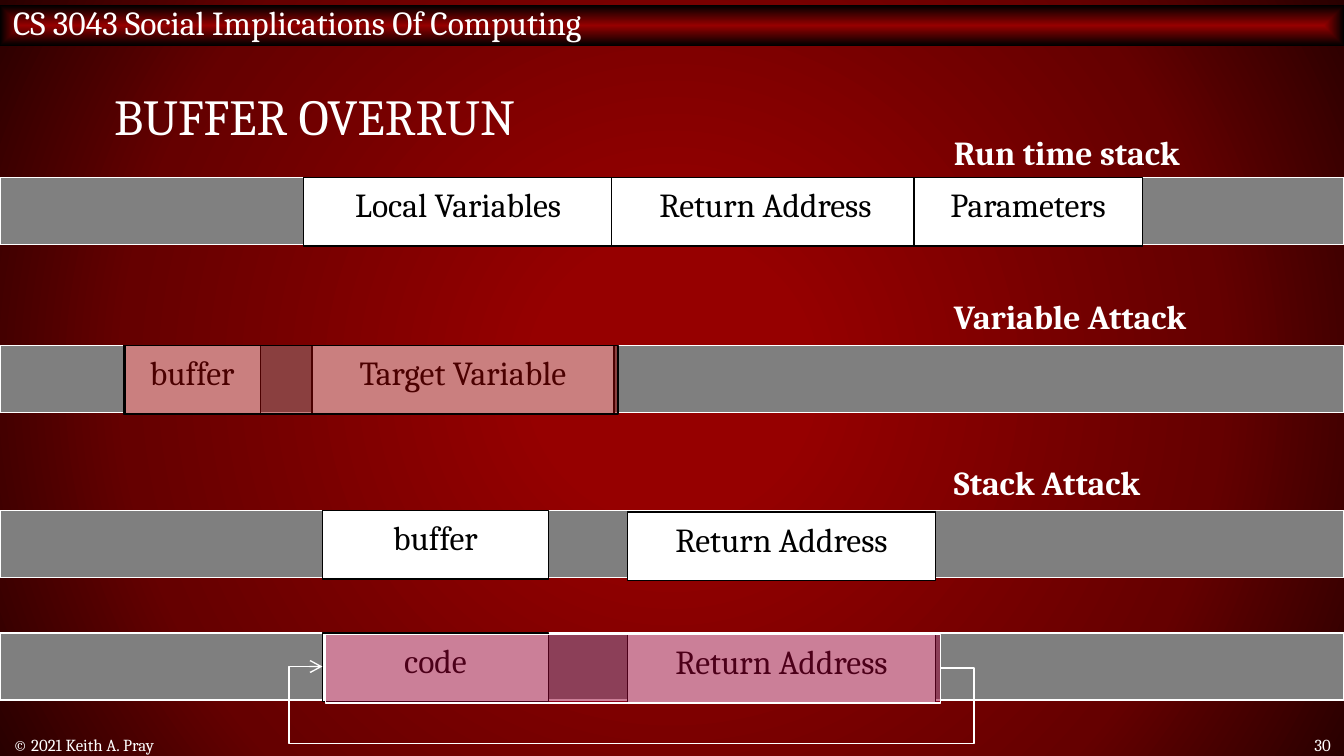
from dataclasses import dataclass

from lxml import etree
from pptx import Presentation
from pptx import util as u
from pptx.dml import color
from pptx.enum import shapes, text
from pptx.oxml import ns, parse_xml


@dataclass(frozen=True)
class Theme:
    font: str = "Cambria"
    title: float = 27
    body: float = 18
    footer: float = 9
    line: float = 0.75
    white: str = "FFFFFF"
    black: str = "000000"
    gray: str = "7F7F7F"
    light_gray: str = "808080"
    red: str = "960000"
    dark_red: str = "650000"
    deep_red: str = "290000"
    crimson: str = "990033"


THEME = Theme()
CELL_HEIGHT = 0.51
LEFT, CENTER, RIGHT = text.PP_ALIGN.LEFT, text.PP_ALIGN.CENTER, text.PP_ALIGN.RIGHT
TOP, MIDDLE = text.MSO_ANCHOR.TOP, text.MSO_ANCHOR.MIDDLE

STACK_ROWS = [
    (1.32, THEME.light_gray, [("Local Variables", 2.26, 1.32, 2.3),
                              ("Return Address", 4.55, 1.32, 2.29),
                              ("Parameters", 6.8, 1.32, 1.7)]),
    (2.57, THEME.gray, [("buffer", 0.92, 2.57, 1.02), ("Target Variable", 2.32, 2.57, 2.25)]),
    (3.8, THEME.gray, [("buffer", 2.4, 3.8, 1.68), ("Return Address", 4.67, 3.81, 2.29)]),
    (4.71, THEME.gray, [("code", 2.4, 4.71, 1.68), ("Return Address", 4.67, 4.72, 2.29)]),
]
OVERRUNS = {
    2.57: (0.93, 2.57, 3.67, THEME.red, THEME.black),
    4.71: (2.42, 4.72, 4.58, THEME.crimson, THEME.white),
}
HEADINGS = [("Run time stack", 0.93), ("Variable Attack", 2.15), ("Stack Attack", 3.39)]


def rgb(value):
    return color.RGBColor.from_string(value)


def write(shape, words, size=THEME.body, ink=THEME.white, bold=False, align=LEFT,
          anchor=TOP, wrap=True, spacing=None):
    frame = shape.text_frame
    frame.auto_size = text.MSO_AUTO_SIZE.NONE
    frame.word_wrap = wrap
    frame.vertical_anchor = anchor
    para = frame.paragraphs[0]
    para.alignment = align
    if spacing:
        para.line_spacing = spacing
    span = para.add_run()
    span.text = words
    span.font.name = THEME.font
    span.font.size = u.Pt(size)
    span.font.bold = bold
    span.font.color.rgb = rgb(ink)


def add_text(page, words, left, top, width, height, **style):
    box = page.shapes.add_textbox(*map(u.Inches, (left, top, width, height)))
    write(box, words, **style)


def add_box(page, left, top, width, height, fill, line=None, opacity=None):
    box = page.shapes.add_shape(shapes.MSO_SHAPE.RECTANGLE,
                                *map(u.Inches, (left, top, width, height)))
    box.shadow.inherit = False
    box.fill.solid()
    box.fill.fore_color.rgb = rgb(fill)
    if line:
        box.line.color.rgb = rgb(line)
        box.line.width = u.Pt(THEME.line)
    else:
        box.line.fill.background()
    if opacity:
        tint = box._element.spPr.find(ns.qn("a:solidFill"))[0]
        etree.SubElement(tint, ns.qn("a:alpha")).set("val", str(opacity * 1000))
    return box


def set_path_gradient(owner, fill, kind, stops):
    fill.gradient()
    gradient = owner._element.xpath(".//a:gradFill")[0]
    marks = "".join(f'<a:gs pos="{place * 1000}"><a:srgbClr val="{tone}"/></a:gs>'
                    for place, tone in stops)
    gradient.getparent().replace(gradient, parse_xml(
        f'<a:gradFill {ns.nsdecls("a")} rotWithShape="1"><a:gsLst>{marks}</a:gsLst>'
        f'<a:path path="{kind}"><a:fillToRect l="50000" t="50000" r="50000" b="50000"/>'
        '</a:path></a:gradFill>'))


def add_header(page, words):
    banner = add_box(page, 0, 0.04, 10, 0.3, THEME.red)
    set_path_gradient(banner, banner.fill, "shape", [(0, THEME.red), (100, THEME.black)])
    banner.text_frame.margin_top = 0
    write(banner, words, anchor=MIDDLE)


def add_title(page, words):
    title = page.shapes.title
    title.left, title.top, title.width, title.height = map(u.Inches, (0.75, 0.4, 8.5, 1))
    write(title, words, size=THEME.title, anchor=MIDDLE, spacing=0.8)


def add_stack_row(page, row_top, shade, cells):
    add_box(page, 0, row_top, 10, 0.5, shade, THEME.white)
    for words, left, top, width in cells:
        cell = add_box(page, left, top, width, CELL_HEIGHT, THEME.white, THEME.black)
        write(cell, words, ink=THEME.black, align=CENTER, wrap=False)
    if row_top in OVERRUNS:
        left, top, width, fill, line = OVERRUNS[row_top]
        add_box(page, left, top, width, CELL_HEIGHT, fill, line, opacity=50)


def add_return_arrow(page):
    arrow = page.shapes.add_connector(shapes.MSO_CONNECTOR.ELBOW,
                                      *map(u.Inches, (7, 4.97, 2.4, 4.96)))
    arrow.line.color.rgb = rgb(THEME.white)
    arrow.line.width = u.Pt(THEME.line)
    props = arrow._element.spPr
    geometry = props.find(ns.qn("a:prstGeom"))
    geometry.set("prst", "bentConnector5")
    guides = geometry.get_or_add_avLst()
    for number, value in enumerate((-5400, -5700000, 105400), 1):
        guide = etree.SubElement(guides, ns.qn("a:gd"))
        guide.set("name", f"adj{number}")
        guide.set("fmla", f"val {value}")
    etree.SubElement(props.find(ns.qn("a:ln")), ns.qn("a:tailEnd")).set("type", "arrow")
    etree.SubElement(props, ns.qn("a:effectLst"))


def main():
    deck = Presentation()
    deck.slide_width = u.Inches(10)
    deck.slide_height = deck.slide_width * 9 // 16
    page = deck.slides.add_slide(deck.slide_layouts[5])
    set_path_gradient(page, page.background.fill, "circle",
                      [(17, THEME.red), (71, THEME.dark_red), (100, THEME.deep_red)])
    add_header(page, "CS 3043 Social Implications Of Computing")
    add_title(page, "BUFFER OVERRUN")
    for row in STACK_ROWS:
        add_stack_row(page, *row)
    add_return_arrow(page)
    for words, top in HEADINGS:
        add_text(page, words, 7, top, 3, 0.4, bold=True)
    footer = {"size": THEME.footer, "anchor": MIDDLE}
    add_text(page, "© 2021 Keith A. Pray", 0, 5.46, 6.08, 0.16, **footer)
    add_text(page, "30", 9.32, 5.46, 0.68, 0.16, align=RIGHT, **footer)
    deck.save("out.pptx")


if __name__ == "__main__":
    main()
